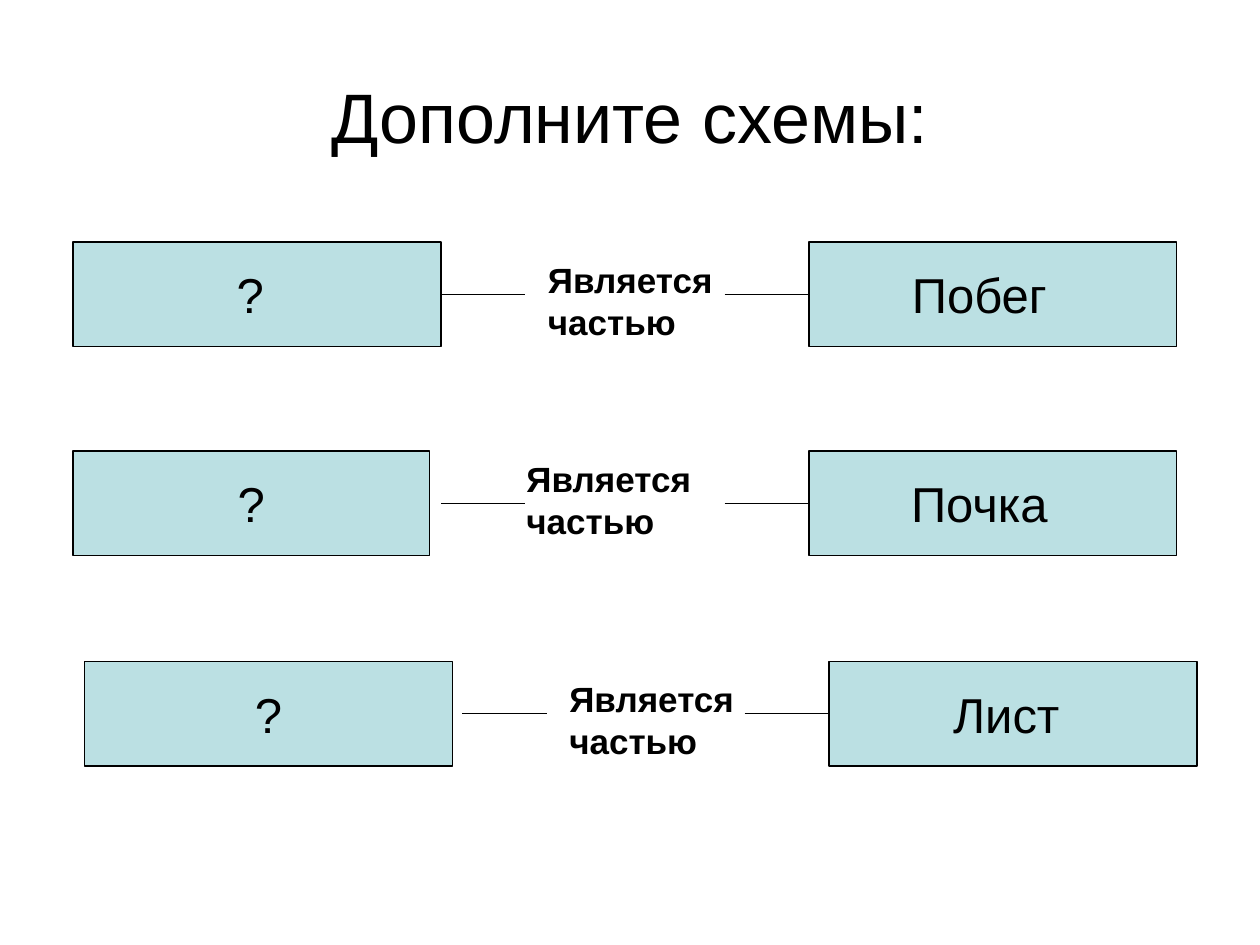
from dataclasses import dataclass

from lxml import etree
from pptx import Presentation
from pptx.dml.color import RGBColor
from pptx.enum.shapes import MSO_CONNECTOR, MSO_SHAPE
from pptx.enum.text import MSO_ANCHOR, MSO_AUTO_SIZE, PP_ALIGN
from pptx.oxml.ns import qn
from pptx.shapes.autoshape import Shape
from pptx.slide import Slide
from pptx.text.text import TextFrame
from pptx.util import Inches, Pt

RECTANGLE = MSO_SHAPE.RECTANGLE
STRAIGHT = MSO_CONNECTOR.STRAIGHT
MIDDLE = MSO_ANCHOR.MIDDLE
LEFT, CENTER = PP_ALIGN.LEFT, PP_ALIGN.CENTER
NO_FIT, GROW = MSO_AUTO_SIZE.NONE, MSO_AUTO_SIZE.SHAPE_TO_FIT_TEXT
LEFT_SIDE, RIGHT_SIDE = 1, 3


@dataclass(frozen=True)
class Theme:
    font: str = "Arial"
    ink: RGBColor = RGBColor(0x00, 0x00, 0x00)
    box_fill: RGBColor = RGBColor(0xBB, 0xE0, 0xE3)
    title_size: Pt = Pt(40)
    box_size: Pt = Pt(28)
    label_size: Pt = Pt(20)
    line_width: Pt = Pt(0.75)


@dataclass(frozen=True)
class Relation:
    """One row of the scheme; lengths are in inches."""
    member: str
    whole: str
    top: float
    member_left: float
    whole_left: float
    line_left: float
    label_left: float
    label_top: float
    member_width: float = 2.92


THEME = Theme()
LABEL = "Является частью"
BOX_WIDTH, BOX_HEIGHT = 2.92, 0.83
LINE_LENGTH = 0.67
LABEL_WIDTH, LABEL_HEIGHT = 1.67, 0.77
RELATIONS = [
    Relation("? ", "Побег  ", 1.92, 0.58, 6.42, 3.5, 4.25, 2.0),
    Relation("?", "Почка  ", 3.58, 0.58, 6.42, 3.5, 4.08, 3.58, member_width=2.83),
    Relation("?", "Лист ", 5.25, 0.67, 6.58, 3.67, 4.42, 5.33),
]


def write(tf: TextFrame, text: str, size: Pt, align: PP_ALIGN, bold: bool = False) -> None:
    tf.text = text
    p = tf.paragraphs[0]
    p.alignment = align
    font = p.runs[0].font
    font.name, font.size, font.bold = THEME.font, size, bold
    font.color.rgb = THEME.ink


def add_title(s: Slide, text: str) -> None:
    title = s.shapes.title
    title.left, title.top = Inches(0.75), Inches(0.58)
    title.width, title.height = Inches(8.5), Inches(0.67)
    tf = title.text_frame
    tf.auto_size = NO_FIT
    tf.vertical_anchor = MIDDLE
    write(tf, text, THEME.title_size, CENTER)


def add_box(s: Slide, text: str, left: float, top: float, width: float) -> Shape:
    sp = s.shapes.add_shape(RECTANGLE, Inches(left), Inches(top),
                            Inches(width), Inches(BOX_HEIGHT))
    sp.shadow.inherit = False
    sp.fill.solid()
    sp.fill.fore_color.rgb = THEME.box_fill
    sp.line.color.rgb = THEME.ink
    sp.line.width = THEME.line_width
    tf = sp.text_frame
    tf.word_wrap = False
    tf.vertical_anchor = MIDDLE
    write(tf, text, THEME.box_size, CENTER)
    return sp


def add_line(s: Slide, left: float, y: float, begin: Shape | None = None,
             end: Shape | None = None) -> None:
    """Draw a level line, joined to the boxes it touches."""
    line = s.shapes.add_connector(STRAIGHT, Inches(left), Inches(y),
                                  Inches(left + LINE_LENGTH), Inches(y))
    line.line.color.rgb = THEME.ink
    line.line.width = THEME.line_width
    etree.SubElement(line._element.spPr, qn("a:effectLst"))
    if begin is not None:
        line.begin_connect(begin, RIGHT_SIDE)
    if end is not None:
        line.end_connect(end, LEFT_SIDE)


def add_label(s: Slide, left: float, top: float) -> None:
    sp = s.shapes.add_textbox(Inches(left), Inches(top),
                              Inches(LABEL_WIDTH), Inches(LABEL_HEIGHT))
    tf = sp.text_frame
    tf.word_wrap = True
    tf.auto_size = GROW
    write(tf, LABEL, THEME.label_size, LEFT, bold=True)


def add_relation(s: Slide, rel: Relation) -> None:
    member = add_box(s, rel.member, rel.member_left, rel.top, rel.member_width)
    whole = add_box(s, rel.whole, rel.whole_left, rel.top, BOX_WIDTH)
    y = rel.top + BOX_HEIGHT / 2
    touches = abs(rel.member_left + rel.member_width - rel.line_left) < 0.01
    add_line(s, rel.line_left, y, begin=member if touches else None)
    add_line(s, rel.whole_left - LINE_LENGTH, y, end=whole)
    add_label(s, rel.label_left, rel.label_top)


def main() -> None:
    prs = Presentation()
    prs.slide_width, prs.slide_height = Inches(10), Inches(7.5)
    s = prs.slides.add_slide(prs.slide_layouts[0])
    subtitle = s.placeholders[1]._element
    subtitle.getparent().remove(subtitle)
    add_title(s, "Дополните схемы:")
    for rel in RELATIONS:
        add_relation(s, rel)
    prs.save("out.pptx")


if __name__ == "__main__":
    main()
